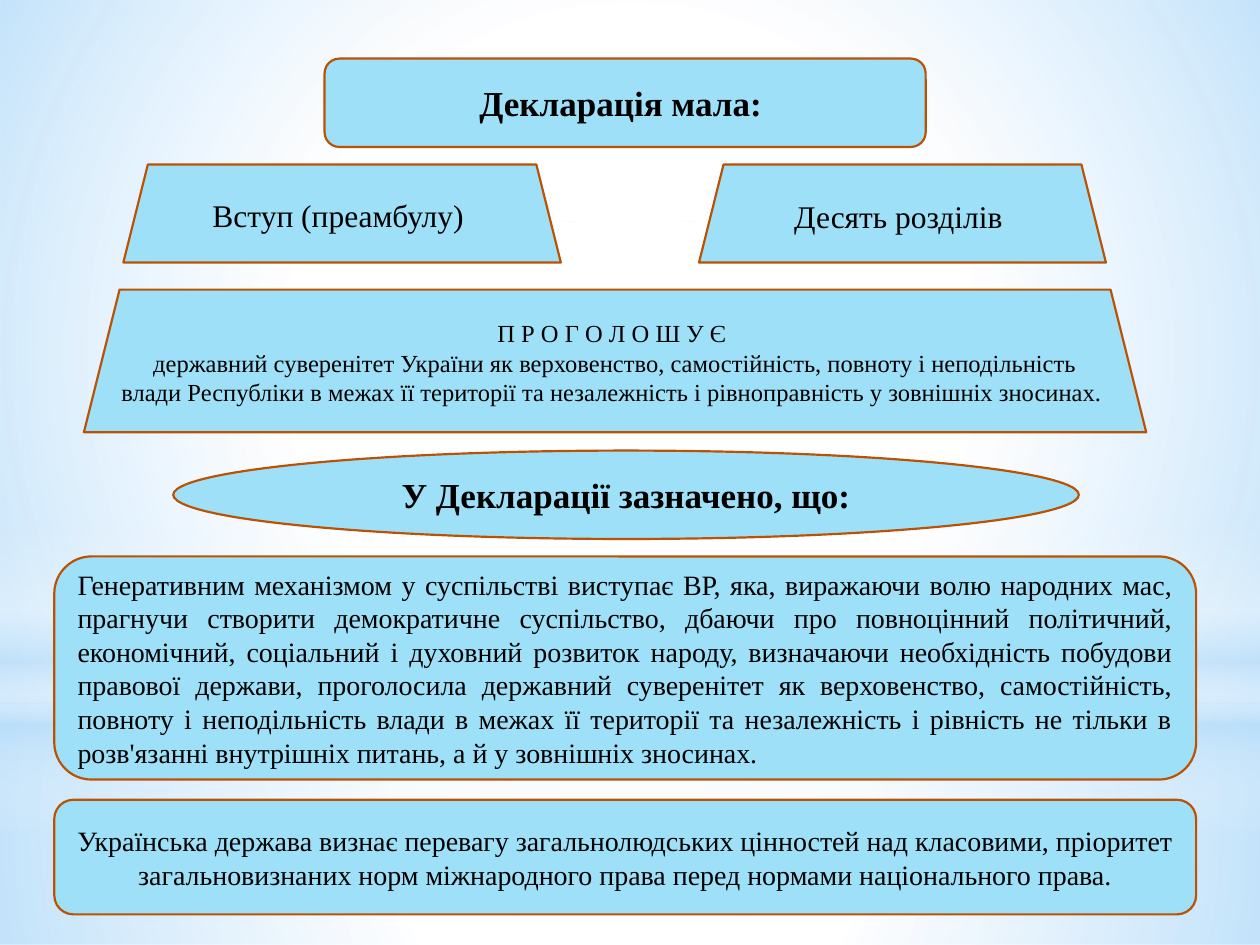
from dataclasses import dataclass

from lxml.etree import SubElement
from pptx import Presentation
from pptx.dml.color import RGBColor
from pptx.enum.shapes import MSO_SHAPE as Preset
from pptx.enum.text import MSO_ANCHOR as Anchor, PP_ALIGN as Align
from pptx.oxml.ns import qn
from pptx.util import Pt


@dataclass(frozen=True)
class Theme:
    font: str = "Times New Roman"
    text: str = "000000"
    panel: str = "9EE0F8"
    border: str = "BB5203"
    white: str = "FFFFFF"
    sky: str = "B4DCFA"
    line: float = 1.25
    heading: int = 20
    branch: int = 18
    body: int = 16
    small: int = 14


THEME = Theme()
WIDTH, HEIGHT = 720, 540


def color(value):
    return RGBColor.from_string(value)


def add_preset(page, preset, box):
    shape = page.shapes.add_shape(preset, *(Pt(length) for length in box))
    shape.shadow.inherit = False
    return shape


def add_glow(page, preset, box, stops, angle=None):
    """Shape with a translucent gradient: linear if angled, else radial."""
    shape = add_preset(page, preset, box)
    shape.line.fill.background()
    shape.fill.gradient()
    grad = shape._element.spPr.find(qn("a:gradFill"))
    for child in list(grad):
        grad.remove(child)
    stop_list = SubElement(grad, qn("a:gsLst"))
    for position, value, alpha in stops:
        stop = SubElement(stop_list, qn("a:gs"), pos=str(position * 1000))
        tint = SubElement(stop, qn("a:srgbClr"), val=value)
        SubElement(tint, qn("a:alpha"), val=str(alpha * 1000))
    if angle is not None:
        SubElement(grad, qn("a:lin"), ang=str(angle * 60000), scaled="0")
    else:
        circle = SubElement(grad, qn("a:path"), path="circle")
        sides = dict.fromkeys("ltrb", "50000")
        SubElement(circle, qn("a:fillToRect"), **sides)


def add_panel(page, preset, box, lines, size, bold=False, align=Align.CENTER):
    shape = add_preset(page, preset, box)
    shape.fill.solid()
    shape.fill.fore_color.rgb = color(THEME.panel)
    shape.line.color.rgb = color(THEME.border)
    shape.line.width = Pt(THEME.line)
    frame = shape.text_frame
    frame.word_wrap = True
    frame.vertical_anchor = Anchor.MIDDLE
    para = frame.paragraphs[0]
    para.alignment = align
    for index, line in enumerate(lines):
        if index:
            para.add_line_break()
        span = para.add_run()
        span.text = line
        span.font.name = THEME.font
        span.font.size = Pt(size)
        span.font.bold = bold
        span.font.color.rgb = color(THEME.text)


def draw_backdrop(page, box):
    left, top, width, height = box
    white, sky = THEME.white, THEME.sky
    horizon = top + 402
    page.background.fill.solid()
    page.background.fill.fore_color.rgb = color(white)
    # Ground and sky meet at the horizon
    add_glow(page, Preset.RECTANGLE, (left, horizon, width, top + height - horizon),
             [(0, white, 91), (37, white, 76), (100, sky, 79)])
    add_glow(page, Preset.RECTANGLE, (left, top, width, horizon - top),
             [(0, white, 89), (48, white, 62), (100, sky, 79)])
    # Horizon haze
    add_glow(page, Preset.RECTANGLE, (left, top + 297, width, 180),
             [(0, white, 0), (29, white, 30), (45, sky, 40),
              (55, white, 26), (65, sky, 60), (100, white, 0)], angle=90)
    # Central light
    add_glow(page, Preset.OVAL, (left, top + 126, width, 402),
             [(0, white, 100), (56, white, 0)])


def draw_structure(page, box):
    """What the declaration consists of and proclaims."""
    left, top, width, height = box
    add_panel(page, Preset.ROUNDED_RECTANGLE, (left + 137.5, top, 343.5, 50.5),
              ["Декларація мала: "], THEME.heading, bold=True)
    branches = [("Вступ (преамбулу) ", 22.5, 250), ("Десять розділів ", 351.5, 232.5)]
    for label, offset, branch_width in branches:
        add_panel(page, Preset.TRAPEZOID, (left + offset, top + 60.5, branch_width, 56),
                  [label], THEME.branch)
    add_panel(page, Preset.TRAPEZOID, (left, top + height - 81.5, width, 81.5),
              ["П Р О Г О Л О Ш У Є ",
               "державний суверенітет України як верховенство, самостійність, "
               "повноту і неподільність влади Республіки в межах її території та "
               "незалежність і рівноправність у зовнішніх зносинах. "],
              THEME.small)


def draw_statements(page, box):
    """What the declaration states."""
    left, top, width, height = box
    add_panel(page, Preset.OVAL, (left + 68, top, 517.5, 50.5),
              ["У Декларації зазначено, що:"], THEME.heading, bold=True)
    add_panel(page, Preset.ROUNDED_RECTANGLE, (left, top + 60.5, width, 127.5),
              ["Генеративним механізмом у суспільстві виступає ВР, яка, виражаючи "
               "волю народних мас, прагнучи створити демократичне суспільство, "
               "дбаючи про повноцінний політичний, економічний, соціальний і "
               "духовний розвиток народу, визначаючи необхідність побудови правової "
               "держави, проголосила державний суверенітет як верховенство, "
               "самостійність, повноту і неподільність влади в межах її території "
               "та незалежність і рівність не тільки в розв'язанні внутрішніх "
               "питань, а й у зовнішніх зносинах."],
              THEME.body, align=Align.JUSTIFY)
    add_panel(page, Preset.ROUNDED_RECTANGLE, (left, top + height - 65.5, width, 65.5),
              ["Українська держава визнає перевагу загальнолюдських цінностей над "
               "класовими, пріоритет загальновизнаних норм міжнародного права перед "
               "нормами національного права."],
              THEME.body)


def main():
    deck = Presentation()
    deck.slide_width, deck.slide_height = Pt(WIDTH), Pt(HEIGHT)
    page = deck.slides.add_slide(deck.slide_layouts[6])
    draw_backdrop(page, (0, 0, WIDTH, HEIGHT))
    draw_structure(page, (48, 33.5, 607, 213.5))
    draw_statements(page, (31, 257.5, 652.5, 265))
    deck.save("out.pptx")


if __name__ == "__main__":
    main()
